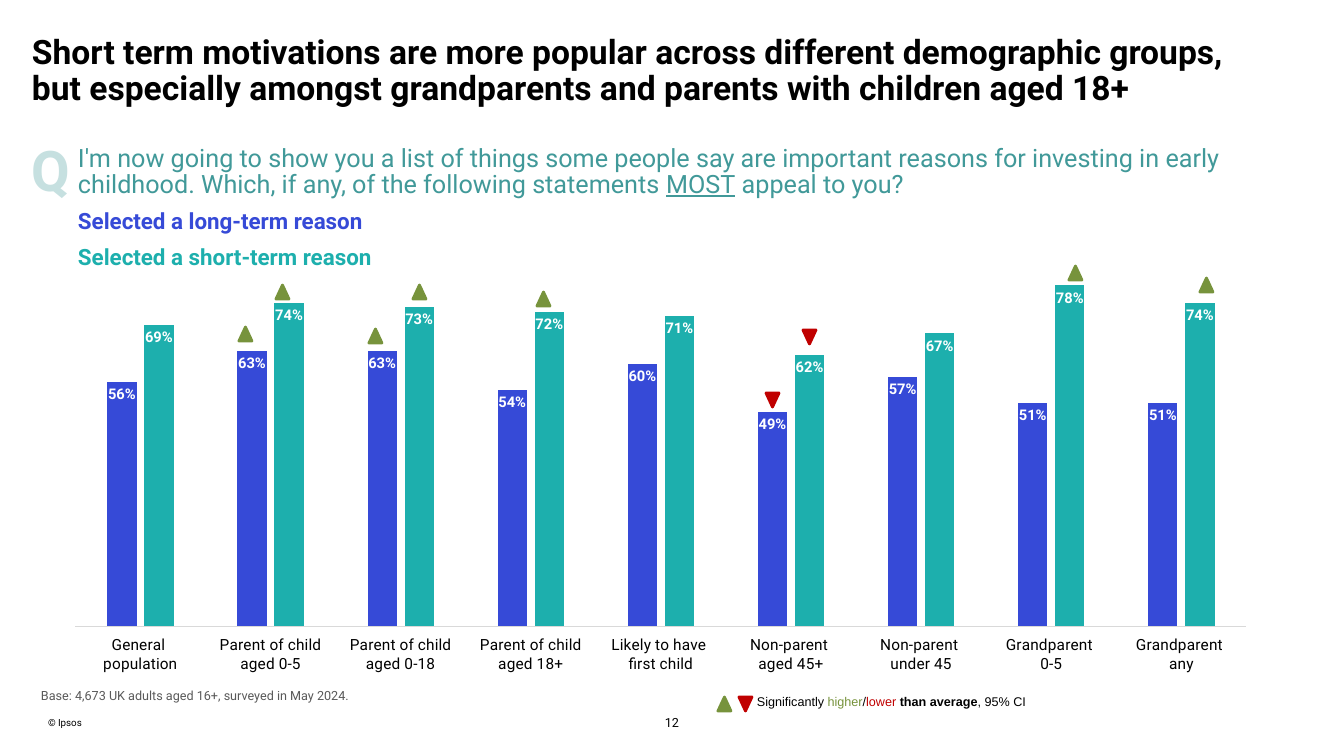
from lxml import etree
from pptx import Presentation
from pptx.chart.data import CategoryChartData
from pptx.dml.color import RGBColor
from pptx.enum.chart import XL_CHART_TYPE, XL_LABEL_POSITION, XL_TICK_LABEL_POSITION, XL_TICK_MARK
from pptx.enum.shapes import MSO_SHAPE
from pptx.enum.text import MSO_ANCHOR, MSO_AUTO_SIZE, PP_ALIGN
from pptx.util import Pt

PX = 914400 / 100.8
TITLE_ONLY = 5
TOP, MIDDLE = MSO_ANCHOR.TOP, MSO_ANCHOR.MIDDLE
LEFT, CENTER = PP_ALIGN.LEFT, PP_ALIGN.CENTER
TRIANGLE = MSO_SHAPE.ISOSCELES_TRIANGLE
COLUMNS = XL_CHART_TYPE.COLUMN_CLUSTERED
INSIDE_END = XL_LABEL_POSITION.INSIDE_END
NO_TICKS = XL_TICK_MARK.NONE
LABELS_LOW = XL_TICK_LABEL_POSITION.LOW

BLACK, WHITE, GREY = "000000", "FFFFFF", "595959"
BLUE, TEAL, QUESTION = "364AD7", "1DAFAD", "419999"
GREEN, RED = "77933C", "C00000"


def color(value):
    return RGBColor.from_string(value)


def write_text(shape, box, runs, size, bold=False, font="Roboto",
               align=LEFT, anchor=TOP, spacing=1.0):
    """Place a text shape and fill it with (text, colour) runs."""
    shape.left, shape.top, shape.width, shape.height = [round(n * PX) for n in box]
    frame = shape.text_frame
    frame.word_wrap = True
    frame.auto_size = MSO_AUTO_SIZE.NONE
    frame.vertical_anchor = anchor
    frame.margin_left = frame.margin_top = frame.margin_right = frame.margin_bottom = 0
    paragraph = frame.paragraphs[0]
    paragraph.alignment = align
    paragraph.line_spacing = spacing
    for text, value in runs:
        run = paragraph.add_run()
        run.text = text
        run.font.name = font
        run.font.size = Pt(size)
        run.font.bold = bold
        run.font.color.rgb = color(value)
    return paragraph


presentation = Presentation()
presentation.slide_width = round(1344 * PX)
presentation.slide_height = round(756 * PX)
slide = presentation.slides.add_slide(presentation.slide_layouts[TITLE_ONLY])
shapes = slide.shapes

# Title
write_text(shapes.title, (32, 35, 1192, 86),
           [("Short term motivations are more popular across different demographic groups, "
             "but especially amongst grandparents and parents with children aged 18+", BLACK)],
           24, bold=True, spacing=0.9)

# Plain text: box, text, colour, size, bold, alignment
for box, text, value, size, bold, align in [
    ((32, 135, 45, 76), "Q", "C6E0E0", 40, True, LEFT),
    ((48, 717, 515, 12), "© Ipsos", BLACK, 7, False, LEFT),
    ((645, 715, 54, 15), "12", BLACK, 9, False, CENTER),
    ((41, 688, 600, 20), "Base: 4,673 UK adults aged 16+, surveyed in May 2024.",
     GREY, 9, False, LEFT),
]:
    write_text(shapes.add_textbox(0, 0, 0, 0), box, [(text, value)], size, bold, align=align)

# Question
question = write_text(
    shapes.add_textbox(0, 0, 0, 0), (78, 144, 1182, 58),
    [("I'm now going to show you a list of things some people say are important reasons for "
      "investing in early childhood. Which, if any, of the following statements ", QUESTION),
     ("MOST", QUESTION), (" appeal to you?", QUESTION)],
    18, anchor=MIDDLE, spacing=0.85)
question.runs[1].font.underline = True

# Chart
chart_data = CategoryChartData(number_format="0%")
chart_data.categories = [
    "General \npopulation", "Parent of child aged 0-5", "Parent of child aged 0-18",
    "Parent of child aged 18+", "Likely to have \nfirst child", "Non-parent \naged 45+",
    "Non-parent \nunder 45", "Grandparent \n0-5", "Grandparent \nany"]
chart_data.add_series("Long-term", [0.56, 0.63, 0.63, 0.54, 0.60, 0.49, 0.57, 0.51, 0.51])
chart_data.add_series("Short-term", [0.69, 0.74, 0.73, 0.72, 0.71, 0.62, 0.67, 0.78, 0.74])
chart_box = [round(n * PX) for n in (51, 224, 1220, 452)]
chart = shapes.add_chart(COLUMNS, *chart_box, chart_data).chart
chart.has_legend = False
chart.has_title = False
chart.font.name = "Roboto"
chart.font.size = Pt(10)
chart.font.color.rgb = color(BLACK)

value_axis = chart.value_axis
value_axis.minimum_scale = 0
value_axis.maximum_scale = 0.9
value_axis.has_major_gridlines = False
value_axis.visible = False

category_axis = chart.category_axis
category_axis.major_tick_mark = NO_TICKS
category_axis.tick_label_position = LABELS_LOW
category_axis.format.line.color.rgb = color("D9D9D9")
category_axis.format.line.width = Pt(0.75)
category_axis.tick_labels.font.name = "Roboto"
category_axis.tick_labels.font.size = Pt(11)
category_axis.tick_labels.font.color.rgb = color(BLACK)

plot = chart.plots[0]
plot.vary_by_categories = False
plot.gap_width = 219
plot.overlap = -27
for series, value in zip(plot.series, (BLUE, TEAL)):
    series.format.fill.solid()
    series.format.fill.fore_color.rgb = color(value)
    labels = series.data_labels
    labels.show_value = True
    labels.position = INSIDE_END
    labels.number_format = "0%"
    labels.number_format_is_linked = False
    labels.font.name = "Roboto"
    labels.font.size = Pt(10.5)
    labels.font.bold = True
    labels.font.color.rgb = color(WHITE)

# Fixed inner plot area, as fractions of the chart
CHART_NS = "http://schemas.openxmlformats.org/drawingml/2006/chart"
plot_area = chart.element.find(f".//{{{CHART_NS}}}plotArea")
for old_layout in plot_area.findall(f"{{{CHART_NS}}}layout"):
    plot_area.remove(old_layout)
layout = etree.Element(f"{{{CHART_NS}}}layout")
manual = etree.SubElement(layout, f"{{{CHART_NS}}}manualLayout")
for tag, setting in [("layoutTarget", "inner"), ("xMode", "edge"), ("yMode", "edge"),
                     ("x", "0.02"), ("y", "0.02"), ("w", "0.96"), ("h", "0.87")]:
    etree.SubElement(manual, f"{{{CHART_NS}}}{tag}").set("val", setting)
plot_area.insert(0, layout)

# Series headings
for top, term, value in [(207, "long", BLUE), (243, "short", TEAL)]:
    write_text(shapes.add_textbox(0, 0, 0, 0), (78, top, 348, 27),
               [(f"Selected a {term}-term reason", value)], 16, bold=True)

# Significance key
key = write_text(
    shapes.add_textbox(0, 0, 0, 0), (757, 694, 300, 16),
    [("Significantly ", BLACK), ("higher", GREEN), ("/", BLACK), ("lower ", RED),
     ("than average", BLACK), (", 95% CI", BLACK)], 9, font="Arial")
key.runs[4].font.bold = True

# Significance markers: the first of each list belongs to the key
higher = [(718, 697), (239, 327), (276, 285), (369, 329), (413, 285),
          (537, 292), (1069, 266), (1200, 278)]
lower = [(739, 697), (766, 393), (803, 330)]
for places, value, rotation in [(higher, GREEN, 0), (lower, RED, 180)]:
    for left, top in places:
        marker = shapes.add_shape(TRIANGLE, *[round(n * PX) for n in (left, top, 13, 14)])
        marker.shadow.inherit = False
        marker.rotation = rotation
        marker.fill.solid()
        marker.fill.fore_color.rgb = color(value)
        marker.line.color.rgb = color(value)
        marker.line.width = Pt(2)

presentation.save("out.pptx")
